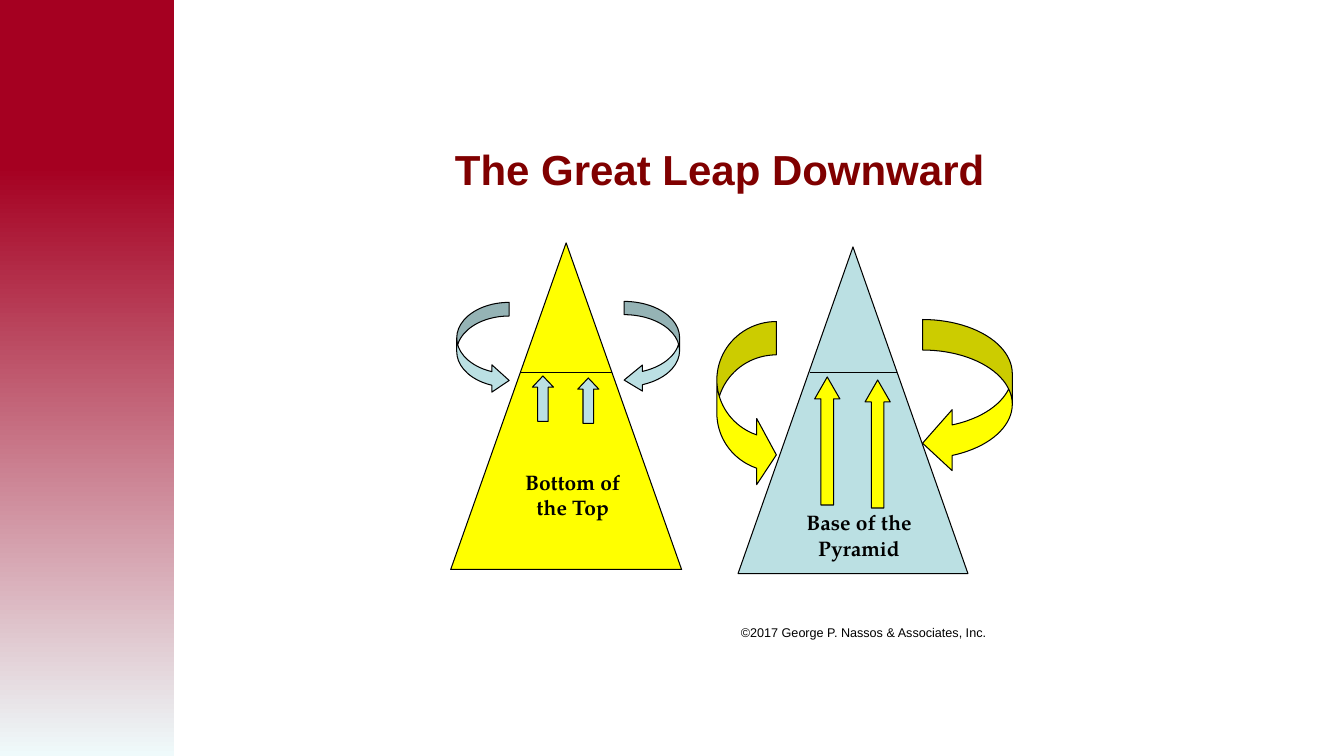
from dataclasses import dataclass

from lxml import etree
from pptx import Presentation
from pptx.dml.color import RGBColor
from pptx.enum.shapes import MSO_CONNECTOR, MSO_SHAPE
from pptx.enum.text import MSO_ANCHOR, MSO_AUTO_SIZE, PP_ALIGN
from pptx.oxml.ns import qn
from pptx.util import Emu, Pt

STRAIGHT = MSO_CONNECTOR.STRAIGHT
RECTANGLE = MSO_SHAPE.RECTANGLE
TRIANGLE = MSO_SHAPE.ISOSCELES_TRIANGLE
UP_ARROW = MSO_SHAPE.UP_ARROW
CURVED_RIGHT = MSO_SHAPE.CURVED_RIGHT_ARROW
CURVED_LEFT = MSO_SHAPE.CURVED_LEFT_ARROW
MIDDLE = MSO_ANCHOR.MIDDLE
TOP = MSO_ANCHOR.TOP
NO_AUTOFIT = MSO_AUTO_SIZE.NONE
CENTER = PP_ALIGN.CENTER
LEFT = PP_ALIGN.LEFT

EMU_PER_PX = 9144
TITLE_ONLY_LAYOUT = 5


@dataclass(frozen=True)
class Theme:
    band_top: str = "A50021"
    band_bottom: str = "EFFAFB"
    title: str = "800000"
    yellow: str = "FFFF00"
    blue: str = "BBE0E3"
    ink: str = "000000"
    sans: str = "Arial"
    serif: str = "TeX Gyre Pagella"
    title_size: int = 30
    label_size: int = 15
    copyright_size: int = 9
    line_width: float = 0.75


THEME = Theme()


def px(value):
    return Emu(value * EMU_PER_PX)


def rgb(color):
    return RGBColor.from_string(color)


def set_outline(line):
    line.color.rgb = rgb(THEME.ink)
    line.width = Pt(THEME.line_width)


def add_band(slide, box):
    band = slide.shapes.add_shape(RECTANGLE, *map(px, box))
    band.shadow.inherit = False
    band.line.fill.background()
    band.fill.gradient()
    band.fill.gradient_angle = 270
    first, last = band.fill.gradient_stops
    first.position, last.position = 0.22, 1
    first.color.rgb = rgb(THEME.band_top)
    last.color.rgb = rgb(THEME.band_bottom)


def add_figure(slide, kind, box, color, adjustments=()):
    shape = slide.shapes.add_shape(kind, *map(px, box))
    shape.shadow.inherit = False
    shape.fill.solid()
    shape.fill.fore_color.rgb = rgb(color)
    set_outline(shape.line)
    for index, value in enumerate(adjustments):
        shape.adjustments[index] = value


def add_divider(slide, left, right, top):
    connector = slide.shapes.add_connector(STRAIGHT, px(left), px(top), px(right), px(top))
    set_outline(connector.line)
    etree.SubElement(connector._element.spPr, qn("a:effectLst"))


def write_text(shape, text, font_name, size, color, bold, alignment, anchor, insets):
    frame = shape.text_frame
    frame.text = text
    frame.word_wrap = True
    frame.auto_size = NO_AUTOFIT
    frame.vertical_anchor = anchor
    frame.margin_left = frame.margin_right = px(insets[0])
    frame.margin_top = frame.margin_bottom = px(insets[1])
    paragraph = frame.paragraphs[0]
    paragraph.alignment = alignment
    font = paragraph.runs[0].font
    font.name = font_name
    font.size = Pt(size)
    font.bold = bold
    font.color.rgb = rgb(color)


def add_title(slide, text, box):
    title = slide.shapes.title
    title.left, title.top, title.width, title.height = map(px, box)
    write_text(title, text, THEME.sans, THEME.title_size, THEME.title, True, CENTER, MIDDLE, (10, 5))


def add_label(slide, text, box):
    label = slide.shapes.add_textbox(*map(px, box))
    write_text(label, text, THEME.serif, THEME.label_size, THEME.ink, True, CENTER, TOP, (6, 3))


def add_copyright(slide, text, box):
    notice = slide.shapes.add_textbox(*map(px, box))
    write_text(notice, text, THEME.sans, THEME.copyright_size, THEME.ink, False, LEFT, TOP, (10, 5))


def add_pyramid(slide, box, color, divider, label, label_box):
    add_figure(slide, TRIANGLE, box, color)
    add_divider(slide, *divider)
    add_label(slide, label, label_box)


def add_up_arrows(slide, positions, size, color, adjustments):
    for position in positions:
        add_figure(slide, UP_ARROW, (*position, *size), color, adjustments)


def main():
    presentation = Presentation()
    presentation.slide_width = px(1333)
    presentation.slide_height = px(750)
    slide = presentation.slides.add_slide(presentation.slide_layouts[TITLE_ONLY_LAYOUT])

    add_band(slide, (0, 0, 173, 750))
    add_title(slide, "The Great Leap Downward", (417, 144, 594, 46))

    add_pyramid(slide, (447, 241, 229, 324), THEME.yellow, (516, 607, 370),
                "Bottom of the Top", (506, 463, 124, 56))
    add_up_arrows(slide, [(528, 373), (573, 375)], (21, 45), THEME.blue, (0.5, 0.53))
    add_figure(slide, CURVED_RIGHT, (453, 300, 52, 91), THEME.blue, (0.26, 0.52, 0.33))
    add_figure(slide, CURVED_LEFT, (619, 299, 55, 91), THEME.blue, (0.24, 0.47, 0.33))

    add_pyramid(slide, (732, 245, 228, 324), THEME.blue, (803, 890, 370),
                "Base of the Pyramid", (781, 503, 142, 56))
    add_up_arrows(slide, [(808, 374), (858, 377)], (25, 127), THEME.yellow, (0.5, 0.87))
    add_figure(slide, CURVED_RIGHT, (711, 319, 59, 165), THEME.yellow, (0.56, 1.11, 0.33))
    add_figure(slide, CURVED_LEFT, (915, 317, 89, 153), THEME.yellow, (0.34, 0.68, 0.33))

    add_copyright(slide, "©2017 George P. Nassos & Associates, Inc.", (725, 615, 286, 25))
    presentation.save("out.pptx")


if __name__ == "__main__":
    main()
